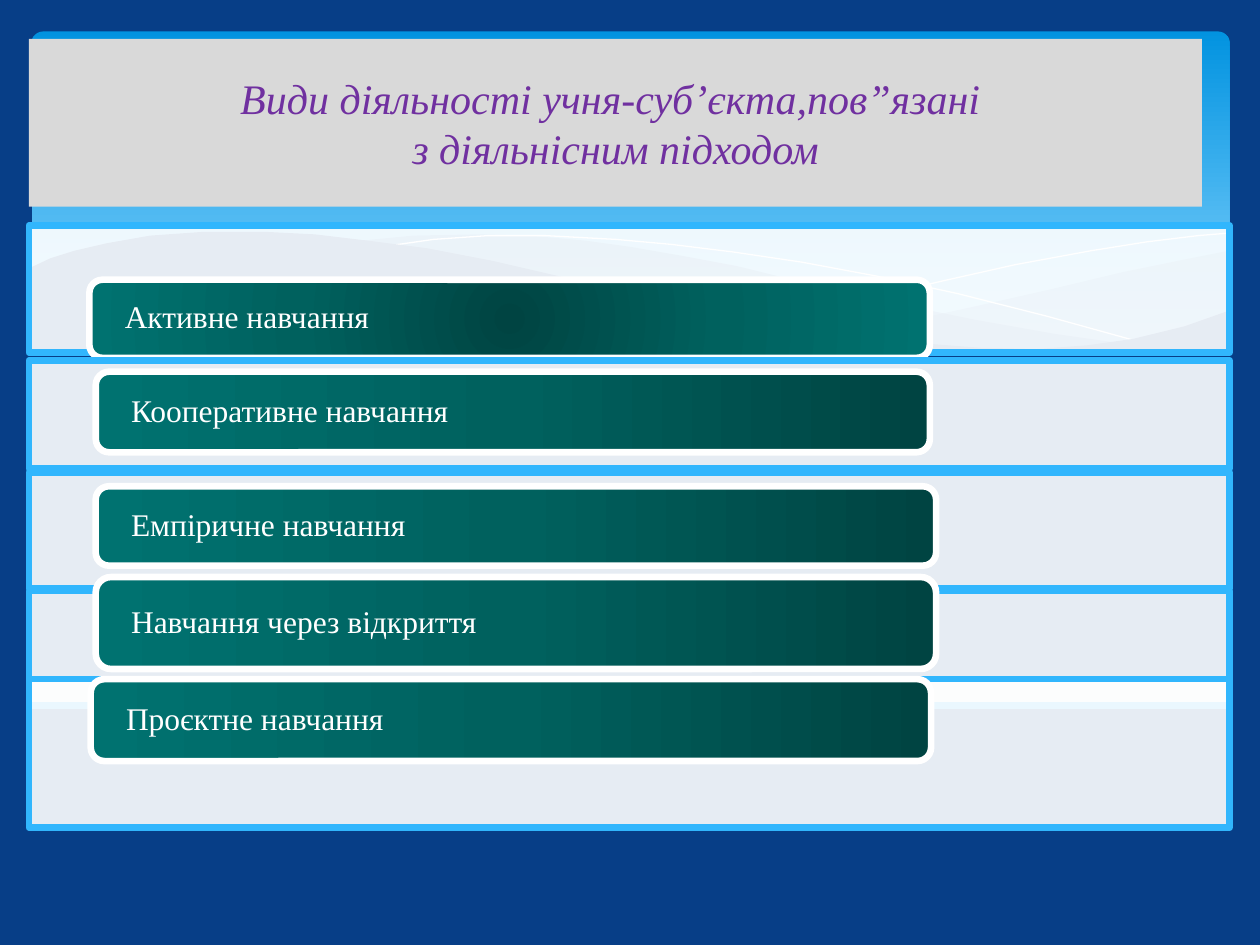
from pptx import Presentation
from pptx.dml.color import RGBColor
from pptx.enum.shapes import MSO_SHAPE
from pptx.enum.text import MSO_ANCHOR, PP_ALIGN
from pptx.oxml import parse_xml
from pptx.oxml.ns import nsdecls, qn
from pptx.util import Inches, Pt
from lxml.etree import SubElement

FONT = "Times New Roman"
NAVY, WHITE, SKY = "073E87", "FFFFFF", "31B6FD"
TEAL = [(0, "004442"), (50, "00615E"), (100, "007270")]
CENTER = ('<a:path path="circle"><a:fillToRect l="50000" t="50000" '
          'r="50000" b="50000"/></a:path>')

ROWS = [
    ("Активне навчання", (1.79, 1.01), (0.71, 2.22, 6.67, 0.62)),
    ("Кооперативне навчання", (2.86, 0.86), (0.76, 2.95, 6.62, 0.64)),
    ("Емпіричне навчання", (3.75, 0.92), (0.76, 3.86, 6.67, 0.63)),
    ("Навчання через відкриття", (4.69, 0.91), (0.76, 4.58, 6.67, 0.73)),
    ("Проєктне навчання", (5.39, 1.18), (0.72, 5.39, 6.67, 0.65)),
]

RIGHT_WAVE = [
    (975, 199), (935, 207), (891, 216), (832, 230), (779, 242), (729, 253),
    (661, 265), (705, 271), (745, 275), (792, 277), (835, 277), (872, 274),
    (905, 269), (935, 261), (963, 252), (976, 247), (976, 199)]
MIDDLE_WAVE = [
    (893, 273), (837, 265), (775, 254), (706, 240), (629, 222), (584, 211),
    (541, 203), (501, 196), (465, 191), (420, 187), (380, 186), (328, 187),
    (286, 191), (342, 199), (404, 211), (449, 222), (530, 240), (601, 255),
    (665, 266), (722, 274), (773, 277), (818, 278), (857, 277), (893, 273)]
FALLING_LINE = [
    (309, 195), (344, 190), (387, 187), (433, 187), (489, 190), (533, 194),
    (582, 200), (636, 208), (695, 219), (760, 233), (831, 251), (907, 272)]
RISING_LINE = [
    (613, 257), (672, 241), (748, 223), (806, 210), (866, 199), (910, 192),
    (951, 187), (975, 185)]
FRONT_WAVE = [
    (977, 246), (940, 259), (899, 269), (863, 274), (823, 277), (778, 276),
    (726, 272), (668, 265), (603, 254), (529, 239), (447, 220), (391, 207),
    (339, 197), (292, 191), (250, 186), (211, 184), (161, 184), (119, 187),
    (85, 193), (59, 199), (40, 205), (23, 213), (23, 329), (977, 329)]


def rgb(hex_color):
    """Turn a hex string into a colour."""
    return RGBColor.from_string(hex_color)


def paint(shape, fill=None, opacity=100, line=None, width=0):
    """Set the fill, outline and opacity of a shape."""
    shape.shadow.inherit = False
    if fill:
        shape.fill.solid()
        shape.fill.fore_color.rgb = rgb(fill)
        if opacity < 100:
            clr = shape.fill._xPr.find(qn("a:solidFill"))[0]
            SubElement(clr, qn("a:alpha")).set("val", str(opacity * 1000))
    else:
        shape.fill.background()
    if line:
        shape.line.color.rgb = rgb(line)
        shape.line.width = Pt(width)
    else:
        shape.line.fill.background()


def shade(shape, stops, direction):
    """Replace the empty fill of a shape by a gradient."""
    gs = "".join(f'<a:gs pos="{pos * 1000}"><a:srgbClr val="{c}"/></a:gs>'
                 for pos, c in stops)
    grad = parse_xml(f'<a:gradFill {nsdecls("a")} rotWithShape="1">'
                     f'<a:gsLst>{gs}</a:gsLst>{direction}</a:gradFill>')
    props = shape.fill._xPr
    props.replace(props.find(qn("a:noFill")), grad)


def linear(degrees):
    """Give the direction of a linear gradient."""
    return f'<a:lin ang="{degrees * 60000}" scaled="0"/>'


def add_box(s, kind, box, **look):
    """Add a painted preset shape."""
    sp = s.shapes.add_shape(kind, *map(Inches, box))
    paint(sp, **look)
    return sp


def add_run(p, text, size, color, italic=False):
    """Add one formatted run to a paragraph."""
    r = p.add_run()
    r.text = text
    r.font.name, r.font.size, r.font.italic = FONT, Pt(size), italic
    r.font.color.rgb = rgb(color)


def add_curve(s, points, closed=True, **look):
    """Add an outline through points given in hundredths of an inch."""
    fb = s.shapes.build_freeform(*points[0], scale=Inches(0.01))
    fb.add_line_segments(points[1:], close=closed)
    paint(fb.convert_to_shape(), **look)


def add_backdrop(s, box):
    """Draw the bright panel and the waves across it."""
    panel = add_box(s, MSO_SHAPE.ROUNDED_RECTANGLE, box)
    panel.adjustments[0] = 0.034
    shade(panel, [(0, "0293E0"), (90, "83D3FE")], linear(90))
    add_curve(s, RIGHT_WAVE, fill=NAVY, opacity=29)
    add_curve(s, MIDDLE_WAVE, fill=NAVY, opacity=40)
    for points in (FALLING_LINE, RISING_LINE):
        add_curve(s, points, closed=False, line=WHITE)
    add_curve(s, FRONT_WAVE, fill=NAVY)


def add_title(s, box):
    """Add the grey title block."""
    sp = add_box(s, MSO_SHAPE.RECTANGLE, box, fill="D9D9D9")
    tf = sp.text_frame
    tf.word_wrap, tf.vertical_anchor = True, MSO_ANCHOR.MIDDLE
    p = tf.paragraphs[0]
    p.alignment = PP_ALIGN.CENTER
    add_run(p, "Види діяльності учня-суб’єкта,пов”язані ", 24, "7030A0", True)
    p.add_line_break()
    add_run(p, "з діяльнісним підходом", 24, "7030A0", True)


def add_row(s, text, frame, bar, direction):
    """Add a framed band with its labelled bar."""
    add_box(s, MSO_SHAPE.RECTANGLE, frame, fill=WHITE, opacity=90,
            line=SKY, width=3.78)
    sp = add_box(s, MSO_SHAPE.ROUNDED_RECTANGLE, bar, line=WHITE, width=3.78)
    shade(sp, TEAL, direction)
    x, y, w, h = bar
    label = (x + 0.03, y + 0.03, w - 0.06, h - 0.06)
    tf = s.shapes.add_textbox(*map(Inches, label)).text_frame
    tf.word_wrap, tf.vertical_anchor = True, MSO_ANCHOR.MIDDLE
    tf.margin_left = tf.margin_right = Inches(0.25)
    tf.margin_top = tf.margin_bottom = 0
    p = tf.paragraphs[0]
    p.line_spacing = 0.9
    add_run(p, text, 18, WHITE)


def main():
    """Build and save the slide."""
    prs = Presentation()
    prs.slide_width, prs.slide_height = Inches(10), Inches(7.5)
    s = prs.slides.add_slide(prs.slide_layouts[6])
    s.background.fill.solid()
    s.background.fill.fore_color.rgb = rgb(NAVY)
    add_backdrop(s, (0.25, 0.25, 9.51, 2.7))
    add_title(s, (0.23, 0.31, 9.31, 1.33))
    for i, (text, (top, height), bar) in enumerate(ROWS):
        direction = linear(180) if i else CENTER
        add_row(s, text, (0.23, top, 9.53, height), bar, direction)
    prs.save("out.pptx")


if __name__ == "__main__":
    main()
